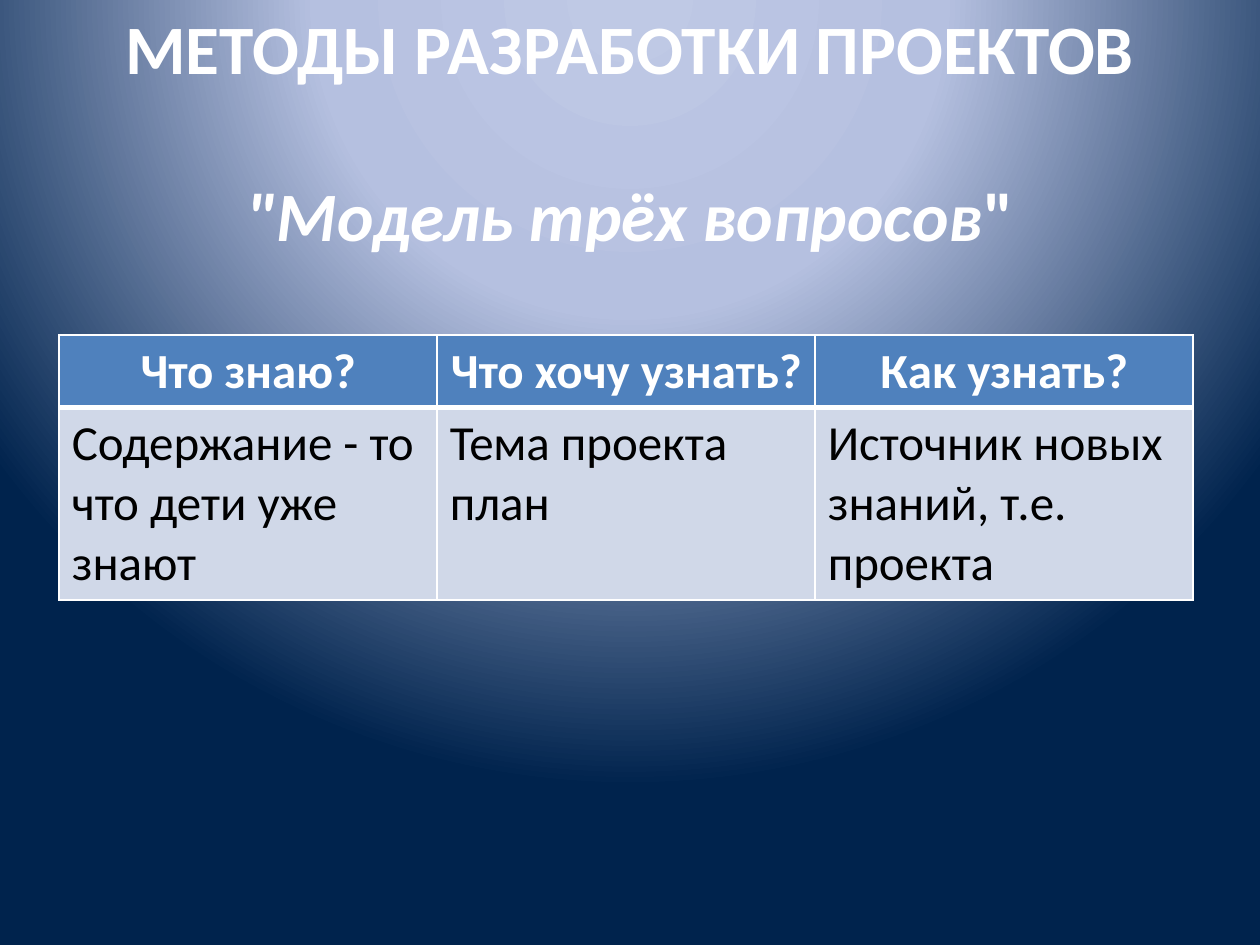
import pptx
import pptx.util
import pptx.dml.color
import pptx.enum.text
import pptx.oxml
import pptx.oxml.ns

Inches = pptx.util.Inches
Pt = pptx.util.Pt
ALIGN = pptx.enum.text.PP_ALIGN


def color(value):
    return pptx.dml.color.RGBColor.from_string(value)


def add_text(para, text, size=28, fill="FFFFFF", bold=False, italic=False, align=None):
    span = para.add_run()
    span.text = text
    span.font.name = "Calibri"
    span.font.size = Pt(size)
    span.font.color.rgb = color(fill)
    span.font.bold = bold
    span.font.italic = italic
    para.alignment = align


deck = pptx.Presentation()
deck.slide_width = Inches(10)
deck.slide_height = Inches(7.5)
page = deck.slides.add_slide(deck.slide_layouts[5])

# Radial background, centred above the top edge
stops = "".join(
    f'<a:gs pos="{percent * 1000}"><a:srgbClr val="{value}"/></a:gs>'
    for percent, value in [(0, "BFC9E5"), (40, "B5C0E0"), (100, "00234D")]
)
gradient = pptx.oxml.parse_xml(
    f'<a:gradFill {pptx.oxml.ns.nsdecls("a")} rotWithShape="1"><a:gsLst>{stops}</a:gsLst>'
    '<a:path path="circle"><a:fillToRect l="50000" t="-80000" r="50000" b="180000"/>'
    "</a:path></a:gradFill>"
)
page.background.fill.gradient()
default_gradient = page.background._cSld.find(".//" + pptx.oxml.ns.qn("a:gradFill"))
default_gradient.getparent().replace(default_gradient, gradient)

# Title: two lines, one empty line's height apart
title = page.shapes.title
title.left, title.top = Inches(0.5), Inches(0.3)
title.width, title.height = Inches(9), Inches(2.12)
frame = title.text_frame
frame.word_wrap = True
frame.auto_size = pptx.enum.text.MSO_AUTO_SIZE.NONE
frame.vertical_anchor = pptx.enum.text.MSO_ANCHOR.BOTTOM
frame.margin_bottom = Inches(0.39)
heading = {"size": 39.6, "bold": True, "align": ALIGN.CENTER}
add_text(frame.paragraphs[0], "МЕТОДЫ РАЗРАБОТКИ ПРОЕКТОВ", **heading)
subtitle = frame.add_paragraph()
subtitle.space_before = Pt(48)
add_text(subtitle, '"Модель трёх вопросов', italic=True, **heading)
add_text(subtitle, '"', **heading)

# Table of the three questions
rows = [
    ["Что знаю?", "Что хочу узнать?", "Как узнать?"],
    ["Содержание - то что дети уже знают", "Тема проекта\nплан",
     "Источник новых знаний, т.е. проекта"],
]
fills = ["4F81BD", "D0D8E8"]
text_formats = [{"bold": True, "align": ALIGN.CENTER}, {"fill": "000000"}]
borders = [
    {"lnL": 1, "lnR": 1, "lnT": 1, "lnB": 3},
    {"lnL": 1, "lnR": 1, "lnT": 3, "lnB": 1},
]
table = page.shapes.add_table(
    2, 3, Inches(0.47), Inches(2.66), Inches(9), Inches(2.07)
).table
for row, height in zip(table.rows, [0.57, 1.5]):
    row.height = Inches(height)

for row_index, texts in enumerate(rows):
    for column_index, text in enumerate(texts):
        cell = table.cell(row_index, column_index)
        properties = cell._tc.get_or_add_tcPr()
        for side, width in borders[row_index].items():
            properties.append(pptx.oxml.parse_xml(
                f'<a:{side} {pptx.oxml.ns.nsdecls("a")} w="{Pt(width)}"><a:solidFill>'
                f'<a:srgbClr val="FFFFFF"/></a:solidFill></a:{side}>'
            ))
        cell.fill.solid()
        cell.fill.fore_color.rgb = color(fills[row_index])
        for line_index, line in enumerate(text.split("\n")):
            frame = cell.text_frame
            para = frame.add_paragraph() if line_index else frame.paragraphs[0]
            add_text(para, line, **text_formats[row_index])

deck.save("out.pptx")
